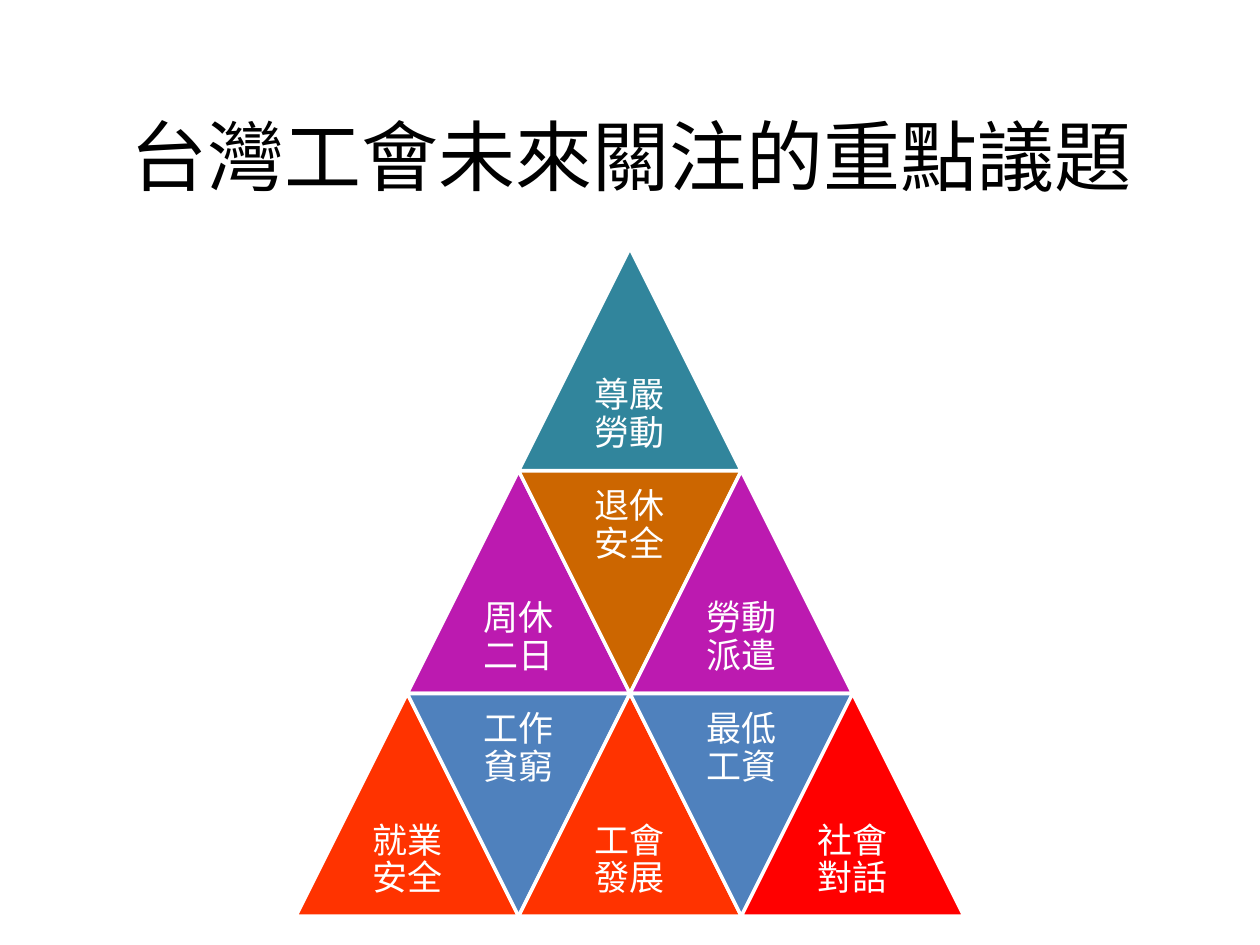
"""Build a slide with a triangle pyramid of the key issues for unions in Taiwan."""
from lxml import etree
from pptx import Presentation
from pptx.dml.color import RGBColor
from pptx.enum.shapes import MSO_SHAPE as SHAPE
from pptx.enum.text import MSO_ANCHOR as ANCHOR, PP_ALIGN as ALIGN
from pptx.oxml.ns import qn
from pptx.util import Cm, Pt

BLACK = RGBColor(0x00, 0x00, 0x00)
WHITE = RGBColor(0xFF, 0xFF, 0xFF)
TEAL = RGBColor(0x31, 0x85, 0x9C)
PURPLE = RGBColor(0xBC, 0x1A, 0xB0)
BROWN = RGBColor(0xCC, 0x66, 0x00)
ORANGE = RGBColor(0xFF, 0x33, 0x00)
BLUE = RGBColor(0x4F, 0x81, 0xBD)
RED = RGBColor(0xFF, 0x00, 0x00)

SIDE = 4.49
CENTER, TOP = 12.7, 5.0
ROWS = [
    [("尊嚴勞動", TEAL)],
    [("周休二日", PURPLE), ("退休安全", BROWN), ("勞動派遣", PURPLE)],
    [("就業安全", ORANGE), ("工作貧窮", BLUE), ("工會發展", ORANGE),
     ("最低工資", BLUE), ("社會對話", RED)],
]


def write(sp, text, size, color, font, spacing=1.0, inset=None):
    tf = sp.text_frame
    tf.word_wrap = True
    tf.vertical_anchor = ANCHOR.MIDDLE
    if inset is not None:
        tf.margin_left = tf.margin_right = tf.margin_top = tf.margin_bottom = inset
    p = tf.paragraphs[0]
    p.alignment = ALIGN.CENTER
    p.line_spacing = spacing
    r = p.add_run()
    r.text = text
    r.font.size = Pt(size)
    r.font.color.rgb = color
    r.font.name = font
    ea = etree.SubElement(r.font._element, qn("a:ea"))
    ea.set("typeface", font)


prs = Presentation()
prs.slide_width, prs.slide_height = Cm(25.4), Cm(19.05)
s = prs.slides.add_slide(prs.slide_layouts[5])

title = s.shapes.title
title.left, title.top, title.width, title.height = Cm(1.3), Cm(1.52), Cm(22.86), Cm(3.18)
write(title, "台灣工會未來關注的重點議題", size=44, color=BLACK, font="Calibri")

pyramid = s.shapes.add_group_shape()
for row, cells in enumerate(ROWS):
    y = TOP + row * SIDE
    for col, (text, color) in enumerate(cells):
        x = CENTER + (col - row - 1) * SIDE / 2
        inverted = col % 2 == 1
        sp = pyramid.shapes.add_shape(SHAPE.ISOSCELES_TRIANGLE, Cm(x), Cm(y), Cm(SIDE), Cm(SIDE))
        sp.rotation = 180 if inverted else 0
        sp.shadow.inherit = False
        sp.fill.solid()
        sp.fill.fore_color.rgb = color
        sp.line.color.rgb = WHITE
        sp.line.width = Pt(2)
        label_y = y if inverted else y + SIDE / 2
        label = pyramid.shapes.add_textbox(Cm(x + SIDE / 4), Cm(label_y), Cm(SIDE / 2), Cm(SIDE / 2))
        write(label, text, size=20, color=WHITE, font="Noto Sans CJK SC", spacing=0.9, inset=Cm(0.2))

prs.save("out.pptx")
